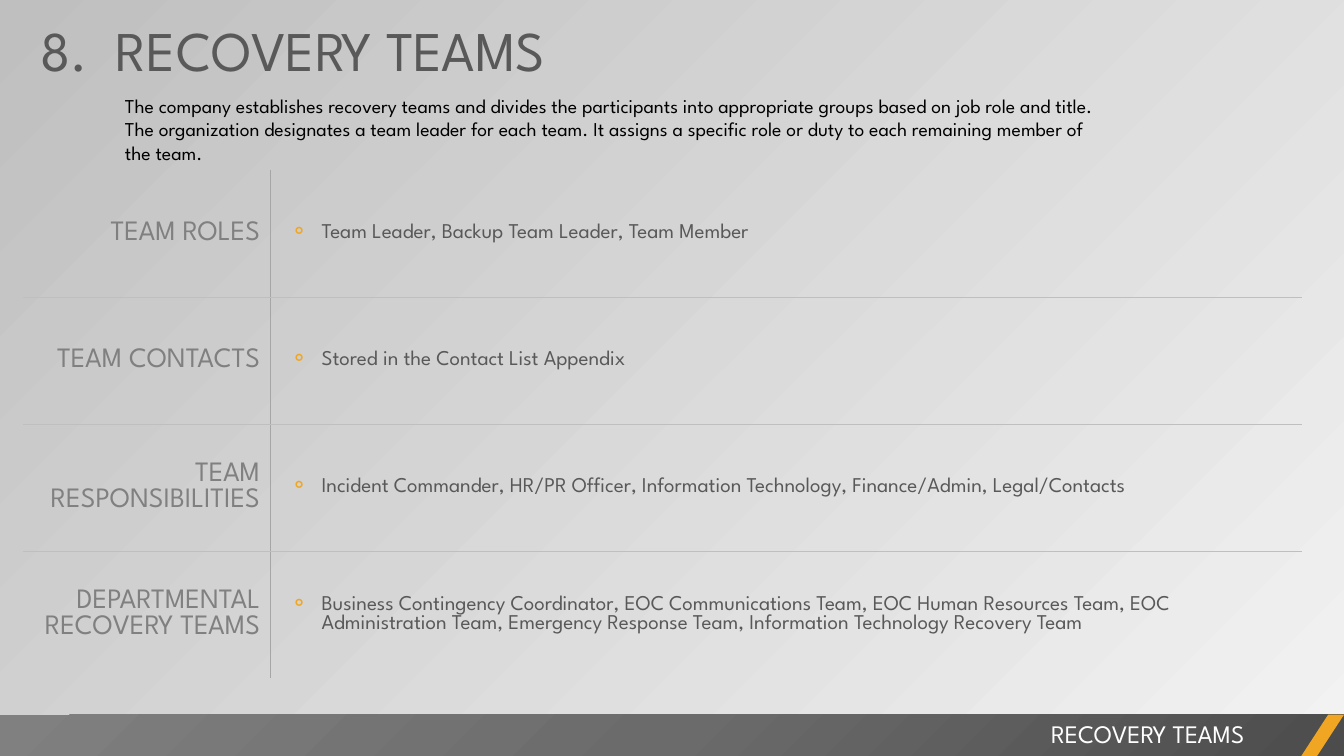
from lxml import etree
from pptx import Presentation
from pptx.dml.color import RGBColor
from pptx.enum import shapes, text
from pptx.oxml import parse_xml
from pptx.oxml.ns import nsdecls, qn
from pptx.util import Inches, Pt

TITLE = "8.  RECOVERY TEAMS"
FOOTER = "RECOVERY TEAMS"
INTRO = (
    "The company establishes recovery teams and divides the participants into "
    "appropriate groups based on job role and title. The organization designates "
    "a team leader for each team. It assigns a specific role or duty to each "
    "remaining member of the team."
)
TEAM_ROWS = [
    ("TEAM ROLES", "Team Leader, Backup Team Leader, Team Member"),
    ("TEAM CONTACTS", "Stored in the Contact List Appendix"),
    ("TEAM RESPONSIBILITIES",
     "Incident Commander, HR/PR Officer, Information Technology, Finance/Admin, Legal/Contacts"),
    ("DEPARTMENTAL RECOVERY TEAMS",
     "Business Contingency Coordinator, EOC Communications Team, EOC Human Resources Team, "
     "EOC Administration Team, Emergency Response Team, Information Technology Recovery Team"),
]

FONT = "League Spartan"
DARK = RGBColor(0x59, 0x59, 0x59)
MID = RGBColor(0x80, 0x80, 0x80)
BLACK = RGBColor(0, 0, 0)
WHITE = RGBColor(0xFF, 0xFF, 0xFF)
ORANGE = RGBColor(0xF0, 0xA6, 0x22)
RULE = RGBColor(0xBF, 0xBF, 0xBF)
DIVIDER = RGBColor(0xA6, 0xA6, 0xA6)
PALE = RGBColor(0xF2, 0xF2, 0xF2)
BAR_STOPS = [(0, RGBColor(0x4C, 0x4C, 0x4C)), (50, RGBColor(0x6B, 0x6B, 0x6B)), (100, MID)]

WIDTH, HEIGHT = 13.33, 7.5
BAR_TOP, BAR_HEIGHT = 7.09, 0.42
ACCENT_WIDTH = 0.43
LABEL_WIDTH, DETAIL_WIDTH, ROW_HEIGHT = 2.45, 10.23, 1.26
NO_STYLE = "{2D5ABB26-0587-4C30-8999-92F81FD0307C}"


def write(frame, words, size, color, align=text.PP_ALIGN.LEFT):
    frame.word_wrap = True
    para = frame.paragraphs[0]
    para.alignment = align
    span = para.add_run()
    span.text = words
    span.font.name = FONT
    span.font.size = Pt(size)
    span.font.color.rgb = color
    return para


def add_bullet(para):
    props = para._p.get_or_add_pPr()
    props.set("marL", str(Inches(0.31)))
    props.set("indent", str(-Inches(0.31)))
    color = etree.SubElement(props, qn("a:buClr"))
    etree.SubElement(color, qn("a:srgbClr"), val=str(ORANGE))
    etree.SubElement(props, qn("a:buFont"), typeface=FONT)
    etree.SubElement(props, qn("a:buChar"), char="⚬")


def set_borders(cell, **colors):
    """Draw the named edges (L, R, T, B) and hide the others."""
    props = cell._tc.get_or_add_tcPr()
    for edge in "LRTB":
        line = etree.SubElement(props, qn(f"a:ln{edge}"), w=str(Pt(0.5)))
        if edge in colors:
            fill = etree.SubElement(line, qn("a:solidFill"))
            etree.SubElement(fill, qn("a:srgbClr"), val=str(colors[edge]))
        else:
            etree.SubElement(line, qn("a:noFill"))


def add_bar_shape(slide, kind, left, width):
    shape = slide.shapes.add_shape(
        kind, Inches(left), Inches(BAR_TOP), Inches(width), Inches(BAR_HEIGHT))
    shape.shadow.inherit = False
    shape.line.fill.background()
    return shape


def fill_from_corner(shape, stops):
    """Fill with a circular gradient centred on the bottom right corner."""
    marks = "".join(
        f'<a:gs pos="{pos * 1000}"><a:srgbClr val="{color}"/></a:gs>' for pos, color in stops)
    gradient = parse_xml(
        f'<a:gradFill {nsdecls("a")} rotWithShape="1"><a:gsLst>{marks}</a:gsLst>'
        '<a:path path="circle"><a:fillToRect l="100000" t="100000"/></a:path></a:gradFill>')
    shape.fill.background()
    props = shape._element.spPr
    props.replace(props.find(qn("a:noFill")), gradient)


def add_text(slide, left, top, width, height, words, size, color, align=text.PP_ALIGN.LEFT):
    box = slide.shapes.add_textbox(Inches(left), Inches(top), Inches(width), Inches(height))
    write(box.text_frame, words, size, color, align)


def add_team_table(slide):
    frame = slide.shapes.add_table(
        len(TEAM_ROWS), 2, Inches(0.23), Inches(1.69),
        Inches(LABEL_WIDTH + DETAIL_WIDTH), Inches(ROW_HEIGHT * len(TEAM_ROWS)))
    table = frame.table
    table.first_row = table.horz_banding = False
    table._tbl.tblPr.find(qn("a:tableStyleId")).text = NO_STYLE
    table.columns[0].width = Inches(LABEL_WIDTH)
    table.columns[1].width = Inches(DETAIL_WIDTH)
    for index, (label, detail) in enumerate(TEAM_ROWS):
        table.rows[index].height = Inches(ROW_HEIGHT)
        rules = {}
        if index > 0:
            rules["T"] = RULE
        if index < len(TEAM_ROWS) - 1:
            rules["B"] = RULE
        label_cell, detail_cell = table.cell(index, 0), table.cell(index, 1)
        set_borders(label_cell, R=DIVIDER, **rules)
        set_borders(detail_cell, L=DIVIDER, **rules)
        for cell in (label_cell, detail_cell):
            cell.fill.background()
            cell.vertical_anchor = text.MSO_ANCHOR.MIDDLE
        detail_cell.margin_left = Inches(0.2)
        write(label_cell.text_frame, label, 20, MID, text.PP_ALIGN.RIGHT)
        add_bullet(write(detail_cell.text_frame, detail, 15, DARK))


def main():
    deck = Presentation()
    deck.slide_width, deck.slide_height = Inches(WIDTH), Inches(HEIGHT)
    slide = deck.slides.add_slide(deck.slide_layouts[5])

    backdrop = slide.background.fill
    backdrop.gradient()
    backdrop.gradient_angle = 135
    for stop, position, color in zip(backdrop.gradient_stops, (0, 1), (PALE, RULE)):
        stop.position = position
        stop.color.rgb = color

    bar = add_bar_shape(slide, shapes.MSO_SHAPE.RECTANGLE, 0, WIDTH)
    fill_from_corner(bar, BAR_STOPS)
    accent = add_bar_shape(
        slide, shapes.MSO_SHAPE.PARALLELOGRAM, WIDTH - ACCENT_WIDTH, ACCENT_WIDTH)
    accent.adjustments[0] = 0.65
    accent.fill.solid()
    accent.fill.fore_color.rgb = ORANGE

    title = slide.shapes.title
    title.left, title.top = Inches(0.3), Inches(0.1)
    title.width, title.height = Inches(12.45), Inches(0.77)
    title.text_frame.vertical_anchor = text.MSO_ANCHOR.TOP
    title.text_frame.auto_size = text.MSO_AUTO_SIZE.NONE
    write(title.text_frame, TITLE, 40, DARK)

    add_text(slide, 5.25, 7.08, 7.19, 0.4, FOOTER, 18, WHITE, text.PP_ALIGN.RIGHT)
    add_team_table(slide)
    add_text(slide, 1.14, 0.88, 10.02, 0.81, INTRO, 14, BLACK)
    deck.save("out.pptx")


if __name__ == "__main__":
    main()
